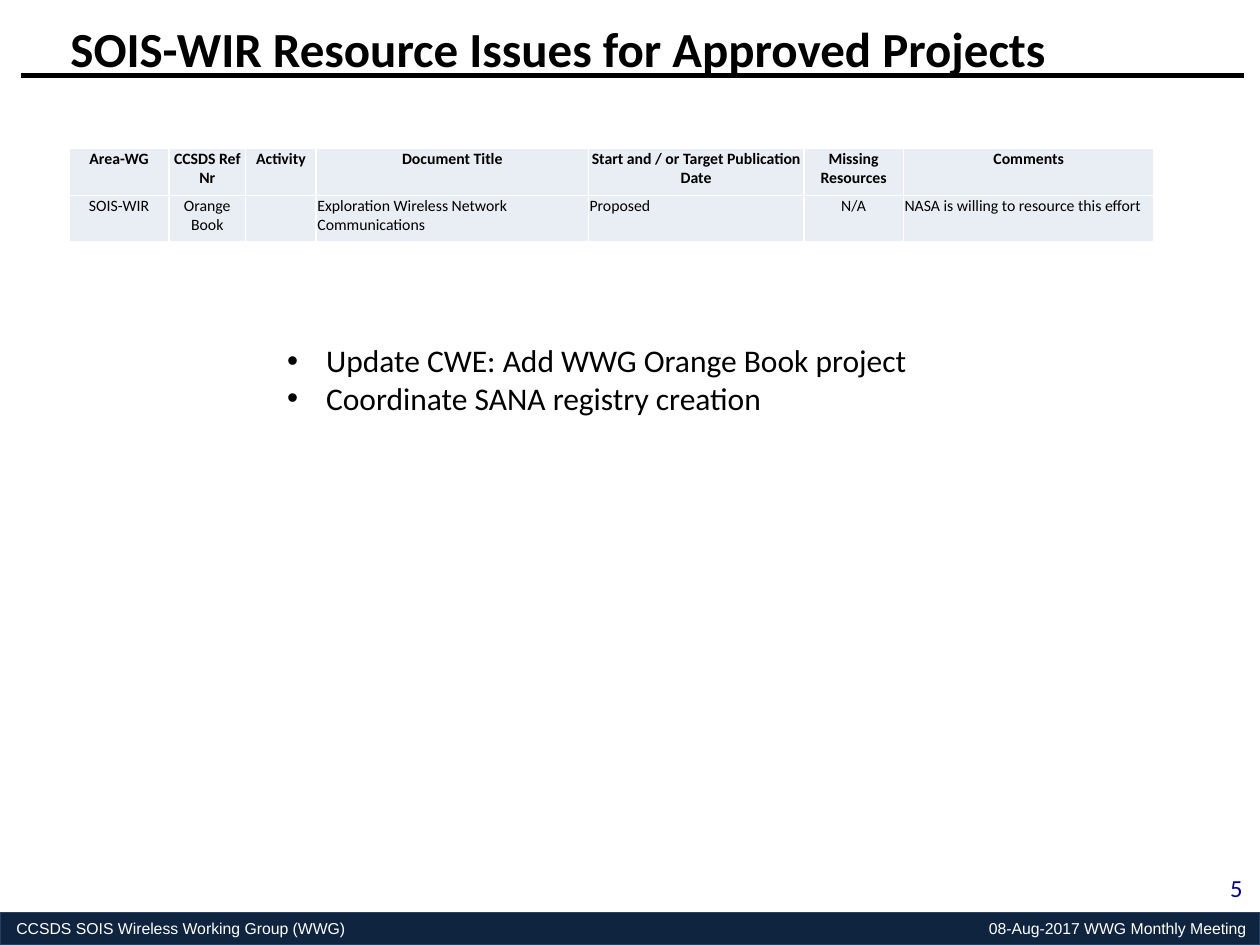
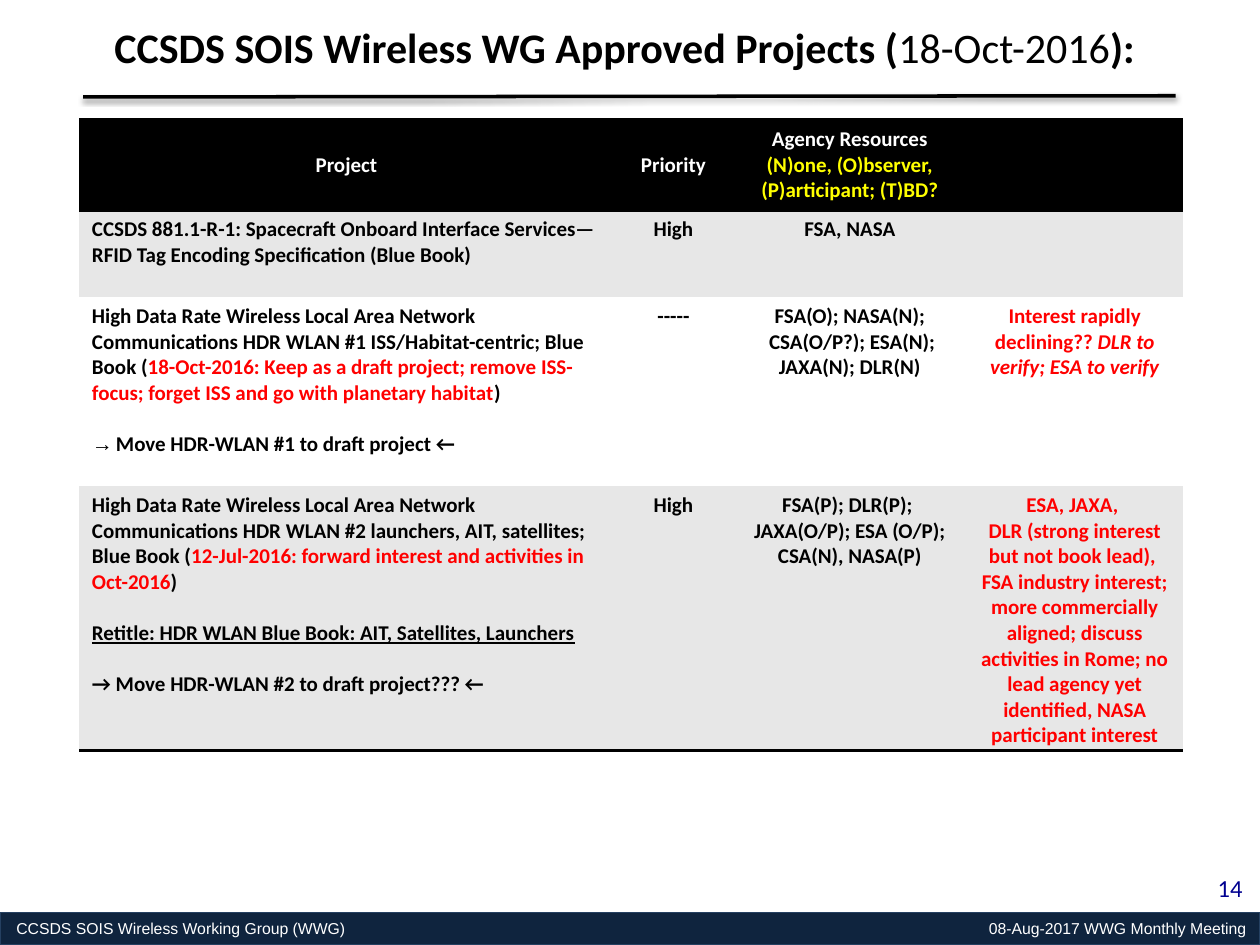
from dataclasses import dataclass
from lxml.etree import SubElement
from pptx import Presentation
from pptx.dml.color import RGBColor
from pptx.enum.shapes import MSO_CONNECTOR as Connector, MSO_SHAPE as Shape
from pptx.enum.text import MSO_ANCHOR as Anchor, PP_ALIGN as Align
from pptx.oxml import parse_xml
from pptx.oxml.ns import nsdecls, qn
from pptx.util import Inches, Pt


@dataclass(frozen=True)
class Theme:
    font: str = "Calibri"
    footer_font: str = "Arial"
    black: str = "000000"
    white: str = "FFFFFF"
    red: str = "FF0000"
    yellow: str = "FFFF00"
    number: str = "000090"
    bar: str = "0F243E"
    bar_edge: str = "254061"
    pale: str = "E9EDF4"
    grey: str = "E7E7E7"
    title_size: float = 28
    long_title_size: float = 24
    bullet_size: float = 18
    number_size: float = 14
    project_size: float = 12
    small_size: float = 9


THEME = Theme()
RED = {"color": THEME.red}
BLANK_LINE = 14.65  # points, one line at the project table's size
PLAIN_TABLE = "{2D5ABB26-0587-4C30-8999-92F81FD0307C}"

# Content: a cell is a list of paragraphs; a paragraph is a string
# or a dict with runs and its own settings.
FOOTER_LEFT = "CCSDS SOIS Wireless Working Group (WWG)"
FOOTER_RIGHT = "08-Aug-2017 WWG Monthly Meeting"

ISSUES_TITLE = "SOIS-WIR Resource Issues for Approved Projects"
ISSUES_COLUMNS = [0.79, 0.61, 0.56, 2.16, 1.71, 0.79, 1.99]
ISSUES_LEFT_ALIGNED = {3, 4, 6}
ISSUES = [
    ["Area-WG", "CCSDS Ref Nr", "Activity", "Document Title",
     "Start and / or Target Publication Date", "Missing Resources", "Comments"],
    ["SOIS-WIR", "Orange Book", "", "Exploration Wireless Network Communications",
     "Proposed", "N/A", "NASA is willing to resource this effort"],
]
ACTIONS = ["Update CWE: Add WWG Orange Book project",
           "Coordinate SANA registry creation"]

PROJECTS_TITLE = [{"runs": [("CCSDS SOIS Wireless WG Approved Projects (", {}),
                            ("18-Oct-2016", {"bold": False}), ("):", {})]}]
PROJECT_COLUMNS = [4.24, 0.95, 1.85, 1.72]
PROJECT_ROWS = [0.72, 0.69, 1.5, 2.09]
PROJECTS = [
    [["Project"], ["Priority"],
     ["Agency Resources",
      {"runs": [("(N)one, (O)bserver, (P)articipant; (T)BD?", {"color": THEME.yellow})]}],
     []],
    [["CCSDS 881.1-R-1: Spacecraft Onboard Interface Services—"
      "RFID Tag Encoding Specification (Blue Book)"],
     ["High"], ["FSA, NASA"], []],
    [[{"runs": [("High Data Rate Wireless Local Area Network Communications "
                 "HDR WLAN #1 ISS/Habitat-centric; Blue Book (", {}),
                ("18-Oct-2016: Keep as a draft project; remove ISS-focus; "
                 "forget ISS and go with planetary habitat", RED),
                (")", {})]},
      {"runs": [("Move HDR-WLAN #1 to draft project ←", {})],
       "bullet": "→", "indent": 0.19, "before": BLANK_LINE}],
     ["-----"],
     ["FSA(O); NASA(N);", " CSA(O/P?); ESA(N); JAXA(N); DLR(N)"],
     [{"runs": [("Interest rapidly declining?? ", RED),
                ("DLR to verify; ESA to verify", {**RED, "italic": True})]}]],
    [[{"runs": [("High Data Rate Wireless Local Area Network Communications "
                 "HDR WLAN #2 launchers, AIT, satellites; Blue Book (", {}),
                ("12-Jul-2016: forward interest and activities in Oct-2016", RED),
                (")", {})]},
      {"runs": [("Retitle: HDR WLAN Blue Book: AIT, Satellites, Launchers",
                 {"underline": True})], "before": BLANK_LINE},
      {"runs": [("→ Move HDR-WLAN #2 to draft project??? ←", {})],
       "before": BLANK_LINE}],
     ["High"],
     ["FSA(P); DLR(P); ", "JAXA(O/P); ESA (O/P); CSA(N), NASA(P)"],
     [{"runs": [(text, RED)]} for text in (
         "ESA, JAXA, ",
         "DLR (strong interest but not book lead), ",
         "FSA industry interest; more commercially aligned; discuss activities "
         "in Rome; no lead agency yet identified, NASA participant interest")]],
]


def rgb(color):
    return RGBColor.from_string(color)


def write_text(frame, paragraphs, size, color=THEME.black, font=THEME.font, bold=False,
               align=Align.LEFT, spacing=None, bullet=None, indent=0):
    """Fill a text frame; runs and paragraphs may override the shared format."""
    for index, item in enumerate(paragraphs):
        if isinstance(item, str):
            item = {"runs": [(item, {})]}
        paragraph = frame.paragraphs[0] if index == 0 else frame.add_paragraph()
        paragraph.alignment = align
        if spacing:
            paragraph.line_spacing = spacing
        if "before" in item:
            paragraph.space_before = Pt(item["before"])
        mark = item.get("bullet", bullet)
        if mark:
            properties = paragraph._p.get_or_add_pPr()
            hang = Inches(item.get("indent", indent))
            properties.set("marL", str(hang))
            properties.set("indent", str(-hang))
            SubElement(properties, qn("a:buFont")).set("typeface", "Arial")
            SubElement(properties, qn("a:buChar")).set("char", mark)
        for text, changes in item["runs"]:
            run = paragraph.add_run()
            run.text = text
            run.font.name, run.font.size = font, Pt(size)
            run.font.bold = changes.get("bold", bold)
            run.font.italic = changes.get("italic")
            run.font.underline = changes.get("underline")
            run.font.color.rgb = rgb(changes.get("color", color))


def set_insets(holder, left, top, right, bottom):
    holder.margin_left, holder.margin_top = Inches(left), Inches(top)
    holder.margin_right, holder.margin_bottom = Inches(right), Inches(bottom)


def add_text(slide, paragraphs, box, insets=(0.1, 0.05, 0.1, 0.05), wrap=True,
             anchor=Anchor.TOP, **text_format):
    frame = slide.shapes.add_textbox(*map(Inches, box)).text_frame
    frame.word_wrap = wrap
    frame.vertical_anchor = anchor
    set_insets(frame, *insets)
    write_text(frame, paragraphs, **text_format)


def add_rule(slide, start, end, width, shadow=False):
    line = slide.shapes.add_connector(Connector.STRAIGHT, *map(Inches, start + end))
    line.line.color.rgb = rgb(THEME.black)
    line.line.width = Pt(width)
    effects = SubElement(line._element.spPr, qn("a:effectLst"))
    if shadow:
        effects.append(parse_xml(
            f'<a:outerShdw {nsdecls("a")} blurRad="{Pt(3.1)}" dist="{Pt(1.6)}" '
            f'dir="5400000" rotWithShape="0"><a:srgbClr val="{THEME.black}">'
            '<a:alpha val="38000"/></a:srgbClr></a:outerShdw>'))


def add_table(slide, left, top, columns, rows):
    frame = slide.shapes.add_table(len(rows), len(columns), Inches(left), Inches(top),
                                   Inches(sum(columns)), Inches(sum(rows)))
    table = frame.table
    table.first_row = table.horz_banding = False
    table._tbl.tblPr.find(qn("a:tableStyleId")).text = PLAIN_TABLE
    for column, width in zip(table.columns, columns):
        column.width = Inches(width)
    for row, height in zip(table.rows, rows):
        row.height = Inches(height)
    return table


def style_cell(cell, fill, sides="", edge=THEME.black, width=1):
    """Fill a cell and draw borders on the given sides, from L, R, T, B in order."""
    cell.fill.solid()
    cell.fill.fore_color.rgb = rgb(fill)
    properties = cell._tc.get_or_add_tcPr()
    for position, side in enumerate(sides):
        properties.insert(position, parse_xml(
            f'<a:ln{side} {nsdecls("a")} w="{Pt(width)}"><a:solidFill>'
            f'<a:srgbClr val="{edge}"/></a:solidFill></a:ln{side}>'))


def add_base_slide(presentation, number):
    """Blank slide with the footer bar and the slide number."""
    slide = presentation.slides.add_slide(presentation.slide_layouts[6])
    bar_box = (0, 7.24, 10, 0.26)
    bar = slide.shapes.add_shape(Shape.RECTANGLE, *map(Inches, bar_box))
    bar.shadow.inherit = False
    bar.fill.solid()
    bar.fill.fore_color.rgb = rgb(THEME.bar)
    bar.line.color.rgb = rgb(THEME.bar_edge)
    bar.line.width = Pt(0.75)
    for text, align in ((FOOTER_LEFT, Align.LEFT), (FOOTER_RIGHT, Align.RIGHT)):
        add_text(slide, [text], bar_box, insets=(0.13, 0, 0.11, 0), anchor=Anchor.MIDDLE,
                 size=THEME.small_size, color=THEME.white, font=THEME.footer_font,
                 align=align)
    add_text(slide, [str(number)], (9.3, 6.88, 0.66, 0.35), size=THEME.number_size,
             color=THEME.number, align=Align.RIGHT)
    return slide


def build_issues_slide(presentation):
    slide = add_base_slide(presentation, 5)
    add_text(slide, [ISSUES_TITLE], (0.5, 0.14, 9.5, 0.58), insets=(0.06,) * 4,
             size=THEME.title_size, bold=True, spacing=0.9)
    add_rule(slide, (0.17, 0.6), (9.87, 0.6), 2.5)

    # Resource table
    table = add_table(slide, 0.55, 1.18, ISSUES_COLUMNS, [0.37] * len(ISSUES))
    for row, texts in enumerate(ISSUES):
        for column, text in enumerate(texts):
            cell = table.cell(row, column)
            set_insets(cell, 0.01, 0.01, 0.01, 0)
            style_cell(cell, THEME.pale, "LRTB", THEME.white)
            left_aligned = row > 0 and column in ISSUES_LEFT_ALIGNED
            write_text(cell.text_frame, [text] if text else [], THEME.small_size,
                       bold=row == 0, align=Align.LEFT if left_aligned else Align.CENTER)

    # Actions
    add_text(slide, ACTIONS, (2.18, 2.66, 5.35, 0.71), size=THEME.bullet_size,
             bullet="•", indent=0.31)


def build_projects_slide(presentation):
    slide = add_base_slide(presentation, 14)

    # Project table
    table = add_table(slide, 0.63, 0.95, PROJECT_COLUMNS, PROJECT_ROWS)
    last = len(PROJECTS) - 1
    for row, cells in enumerate(PROJECTS):
        header = row == 0
        fill = THEME.black if header else THEME.grey if row % 2 else THEME.white
        sides = "TB" if header else "B" if row == last else ""
        for column, paragraphs in enumerate(cells):
            cell = table.cell(row, column)
            style_cell(cell, fill, sides, width=2)
            cell.vertical_anchor = Anchor.MIDDLE if header else Anchor.TOP
            write_text(cell.text_frame, paragraphs, THEME.project_size, bold=True,
                       color=THEME.white if header else THEME.black,
                       align=Align.CENTER if header or column else Align.LEFT)

    # Title and rule
    add_text(slide, PROJECTS_TITLE, (0.81, 0.12, 8.39, 0.5), wrap=False,
             size=THEME.long_title_size, bold=True)
    add_rule(slide, (0.66, 0.77), (9.33, 0.76), 2, shadow=True)


def main():
    presentation = Presentation()
    presentation.slide_width, presentation.slide_height = Inches(10), Inches(7.5)
    build_issues_slide(presentation)
    build_projects_slide(presentation)
    presentation.save("out.pptx")


if __name__ == "__main__":
    main()
